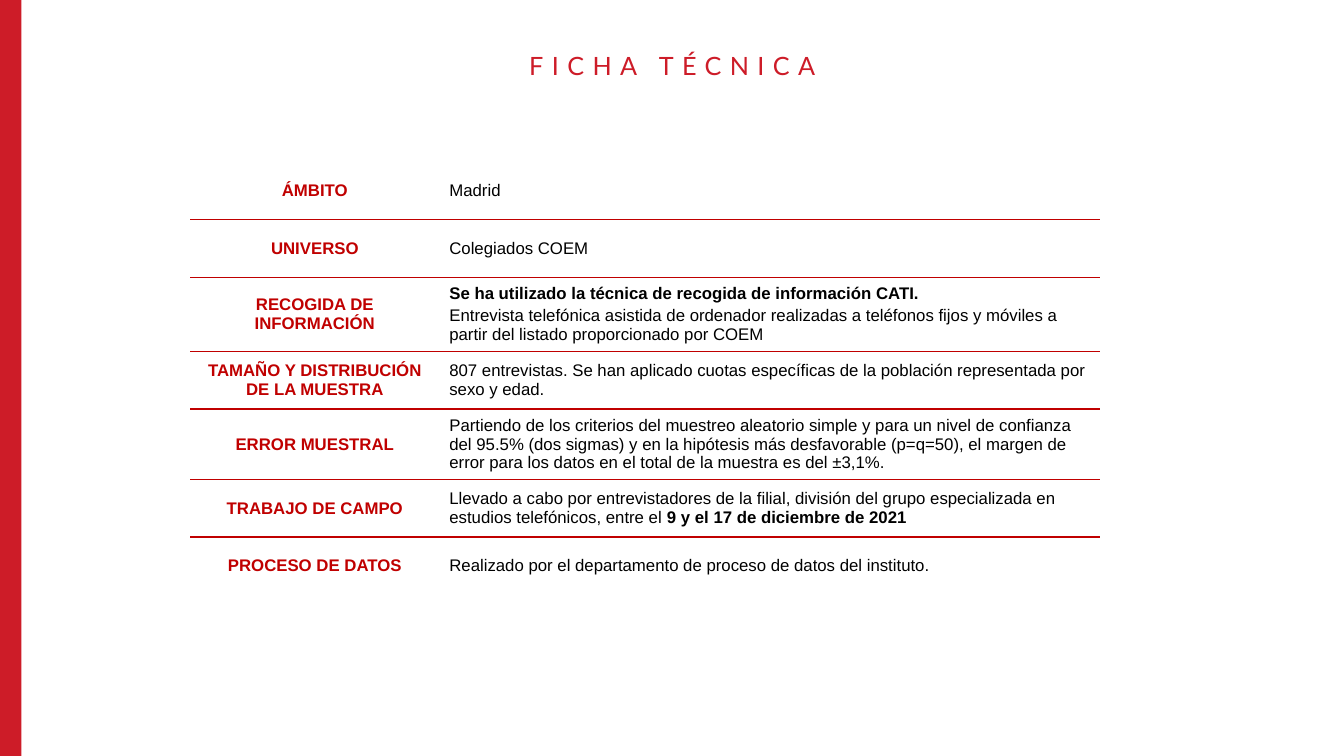
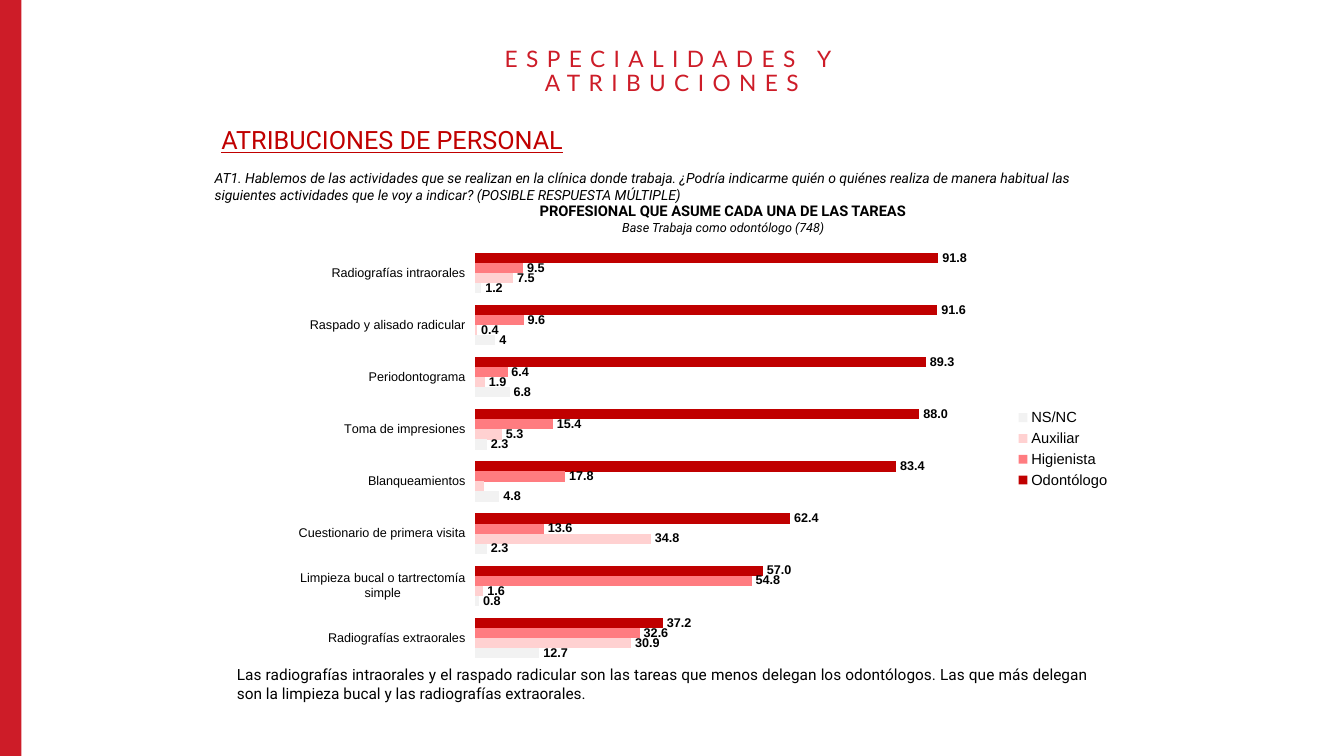
from lxml import etree
from pptx import Presentation, util as u
from pptx.chart import data as chart_data
from pptx.dml import color
from pptx.enum import chart as ch, shapes, text
from pptx.oxml import ns, parse_xml

RED, BRAND, BLACK = "C00000", "CD1C28", "000000"
LEFT, CENTER, JUSTIFY = text.PP_ALIGN.LEFT, text.PP_ALIGN.CENTER, text.PP_ALIGN.JUSTIFY
MIDDLE, TOP = text.MSO_ANCHOR.MIDDLE, text.MSO_ANCHOR.TOP


def rgb(value):
    return color.RGBColor.from_string(value)


def style(font, name="Arial", size=12, ink=BLACK, bold=False, italic=False, underline=False):
    font.name, font.size = name, u.Pt(size)
    font.bold, font.italic, font.underline = bold, italic, underline
    font.color.rgb = rgb(ink)


def write(paragraph, words, align=LEFT, tracking=0, **font):
    paragraph.alignment = align
    run = paragraph.add_run()
    run.text = words
    style(run.font, **font)
    if tracking:
        run.font._element.set("spc", str(tracking * 100))


class Deck:
    """Builds slides that share a red side band, title style and fonts."""

    def __init__(self):
        self.file = Presentation()
        self.file.slide_width, self.file.slide_height = u.Cm(33.87), u.Cm(19.05)
        self.slide = None

    def new_slide(self, title, box, size):
        self.slide = self.file.slides.add_slide(self.file.slide_layouts[6])
        band = self.slide.shapes.add_shape(
            shapes.MSO_SHAPE.RECTANGLE, 0, 0, u.Cm(0.54), self.file.slide_height)
        band.shadow.inherit = False
        band.fill.solid()
        band.fill.fore_color.rgb = rgb(BRAND)
        band.line.fill.background()
        heading = self.text(title, box, anchor=MIDDLE, align=CENTER, name="Lato",
                            size=size, ink=BRAND, tracking=6)
        heading.line_spacing = 0.9

    def text(self, words, box, anchor=TOP, name="Roboto", **fmt):
        frame = self.slide.shapes.add_textbox(*map(u.Cm, box)).text_frame
        frame.word_wrap = True
        frame.vertical_anchor = anchor
        write(frame.paragraphs[0], words, name=name, **fmt)
        return frame.paragraphs[0]

    def border(self, cell, visible):
        properties = cell._tc.get_or_add_tcPr()
        for place, side in enumerate("LRTB"):
            fill = (f'<a:solidFill><a:srgbClr val="{RED}"/></a:solidFill>'
                    if side in visible else "<a:noFill/>")
            properties.insert(place, parse_xml(
                f'<a:ln{side} {ns.nsdecls("a")} w="12700">{fill}</a:ln{side}>'))

    def table(self, entries, left, top, widths, row_height):
        table = self.slide.shapes.add_table(
            len(entries), len(widths), u.Cm(left), u.Cm(top),
            u.Cm(sum(widths)), u.Cm(row_height * len(entries))).table
        table.first_row = table.horz_banding = False
        for column, width in zip(table.columns, widths):
            column.width = u.Cm(width)
        last = len(entries) - 1
        for number, (label, details) in enumerate(entries):
            table.rows[number].height = u.Cm(row_height)
            visible = ("T" if number else "") + ("B" if number < last else "")
            label_cell, detail_cell = table.rows[number].cells
            for cell in (label_cell, detail_cell):
                cell.vertical_anchor = MIDDLE
                cell.fill.background()
                self.border(cell, visible)
            write(label_cell.text_frame.paragraphs[0], label, align=CENTER, ink=RED, bold=True)
            frame = detail_cell.text_frame
            for order, pieces in enumerate(details):
                paragraph = frame.add_paragraph() if order else frame.paragraphs[0]
                if order:
                    paragraph.space_before = u.Pt(2.4)
                for words, bold in pieces:
                    write(paragraph, words, bold=bold)

    def bar_chart(self, categories, series, box, plot_area):
        data = chart_data.CategoryChartData()
        data.categories = categories
        for name, _, _, values in series:
            data.add_series(name, values)
        chart = self.slide.shapes.add_chart(
            ch.XL_CHART_TYPE.BAR_CLUSTERED, *map(u.Cm, box), data).chart
        chart.has_title = False
        style(chart.font, size=10.5)
        chart.has_legend = True
        chart.legend.position = ch.XL_LEGEND_POSITION.RIGHT
        chart.legend.include_in_layout = False

        tasks, scale = chart.category_axis, chart.value_axis
        tasks.reverse_order = True
        tasks.format.line.fill.background()
        style(tasks.tick_labels.font, size=9)
        scale.minimum_scale, scale.maximum_scale, scale.major_unit = 0, 100, 10
        scale.has_major_gridlines = False
        scale.visible = False

        plot = chart.plots[0]
        plot.vary_by_categories = False
        plot.gap_width, plot.overlap = 117, 1
        for bars, (_, fill, number_format, _) in zip(plot.series, series):
            bars.invert_if_negative = False
            bars.format.fill.solid()
            bars.format.fill.fore_color.rgb = rgb(fill)
            labels = bars.data_labels
            labels.show_value = True
            labels.position = ch.XL_LABEL_POSITION.OUTSIDE_END
            labels.number_format = number_format
            labels.number_format_is_linked = False
            style(labels.font, size=9, bold=True)
        self.place_plot(chart, plot_area)
        return chart

    def place_plot(self, chart, plot_area):
        area = chart._chartSpace.find(".//" + ns.qn("c:plotArea"))
        for old in area.findall(ns.qn("c:layout")):
            area.remove(old)
        layout = etree.Element(ns.qn("c:layout"))
        manual = etree.SubElement(layout, ns.qn("c:manualLayout"))
        settings = [("layoutTarget", "inner"), ("xMode", "edge"), ("yMode", "edge")]
        for tag, value in settings + list(zip("xywh", plot_area)):
            etree.SubElement(manual, ns.qn("c:" + tag)).set("val", str(value))
        area.insert(0, layout)

    def hide_label(self, chart, series, point):
        labels = chart.plots[0].series[series]._element.find(ns.qn("c:dLbls"))
        labels.insert(0, parse_xml(
            f'<c:dLbl {ns.nsdecls("c")}><c:idx val="{point}"/><c:delete val="1"/></c:dLbl>'))


def plain(words):
    return [[(words, False)]]


FACTS = [
    ("ÁMBITO", plain("Madrid")),
    ("UNIVERSO", plain("Colegiados COEM")),
    ("RECOGIDA DE INFORMACIÓN", [
        [("Se ha utilizado la técnica de recogida de información CATI.", True)],
        [("Entrevista telefónica asistida de ordenador realizadas a teléfonos fijos y "
          "móviles a partir del listado proporcionado por COEM", False)]]),
    ("TAMAÑO Y DISTRIBUCIÓN DE LA MUESTRA", plain(
        "807 entrevistas. Se han aplicado cuotas específicas de la población "
        "representada por sexo y edad.")),
    ("ERROR MUESTRAL", plain(
        "Partiendo de los criterios del muestreo aleatorio simple y para un nivel de "
        "confianza del 95.5% (dos sigmas) y en la hipótesis más desfavorable (p=q=50), "
        "el margen de error para los datos en el total de la muestra es del ±3,1%.")),
    ("TRABAJO DE CAMPO", [
        [("Llevado a cabo por entrevistadores de la filial, división del grupo especializada "
          "en estudios telefónicos, entre el ", False),
         ("9 y el 17 de diciembre de 2021", True)]]),
    ("PROCESO DE DATOS", plain(
        "Realizado por el departamento de proceso de datos del instituto.")),
]

TASKS = ["Radiografías intraorales", "Raspado y alisado radicular", "Periodontograma",
         "Toma de impresiones", "Blanqueamientos", "Cuestionario de primera visita",
         "Limpieza bucal o tartrectomía simple", "Radiografías extraorales"]

ONE_DECIMAL = "#,##0.0"
STAFF = [
    ("Odontólogo", RED, ONE_DECIMAL, [91.8, 91.6, 89.3, 88, 83.4, 62.4, 57, 37.2]),
    ("Higienista", "FF7C80", "General", [9.5, 9.6, 6.4, 15.4, 17.8, 13.6, 54.8, 32.6]),
    ("Auxiliar", "FFD1D1", ONE_DECIMAL, [7.5, 0.4, 1.9, 5.3, 1.7, 34.8, 1.6, 30.9]),
    ("NS/NC", "F2F2F2", "General", [1.2, 4, 6.8, 2.3, 4.8, 2.3, 0.8, 12.7]),
]


def main():
    deck = Deck()
    deck.new_slide("FICHA TÉCNICA", (9.78, 1.22, 14.33, 0.94), 18)
    deck.table(FACTS, left=4.8, top=4.09, widths=(6.27, 16.64), row_height=1.45)

    deck.new_slide("ESPECIALIDADES Y ATRIBUCIONES", (11.56, 1.35, 10.74, 0.94), 16.2)
    deck.text("Las radiografías intraorales y el raspado radicular son las tareas que menos "
              "delegan los odontólogos. Las que más delegan son la limpieza bucal y las "
              "radiografías extraorales.", (5.72, 16.64, 21.97, 1.19), align=JUSTIFY, size=11)
    deck.text("AT1. Hablemos de las actividades que se realizan en la clínica donde trabaja. "
              "¿Podría indicarme quién o quiénes realiza de manera habitual las siguientes "
              "actividades que le voy a indicar? (POSIBLE RESPUESTA MÚLTIPLE)",
              (5.16, 4.14, 23.57, 1.12), size=10, italic=True)
    deck.text("ATRIBUCIONES DE PERSONAL", (5.33, 3.02, 21.44, 1.02),
              size=18, ink=RED, underline=True)
    chart = deck.bar_chart(TASKS, STAFF, (7.39, 5.66, 20.85, 11.3), (0.22, 0.05, 0.61, 0.93))
    deck.hide_label(chart, series=2, point=4)
    deck.text("PROFESIONAL QUE ASUME CADA UNA DE LAS TAREAS", (8.2, 4.95, 20.04, 0.71),
              align=CENTER, size=10.5, bold=True)
    deck.text("Base Trabaja como odontólogo (748)", (14.76, 5.41, 6.93, 0.64),
              align=CENTER, size=9, italic=True)
    deck.file.save("out.pptx")


if __name__ == "__main__":
    main()
